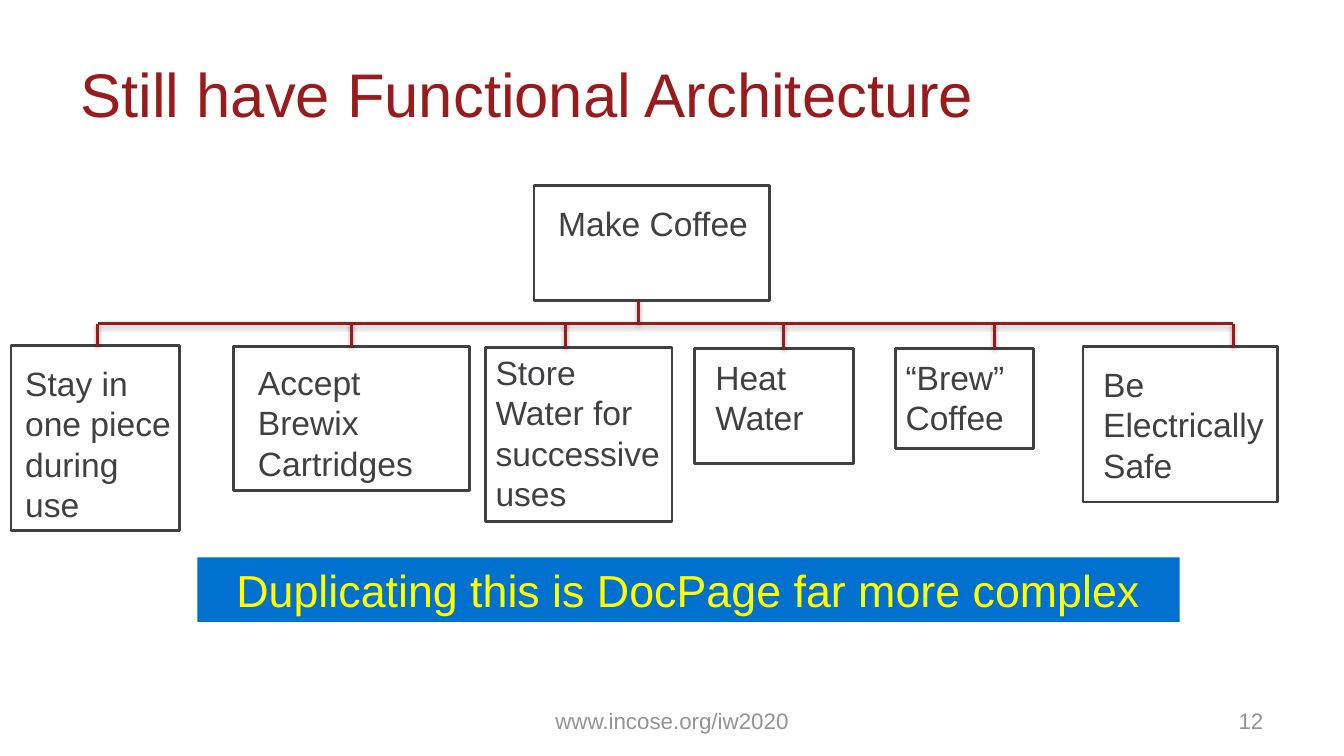
from dataclasses import dataclass

from lxml import etree
from pptx import Presentation
from pptx.dml.color import RGBColor
from pptx.enum.shapes import MSO_CONNECTOR, MSO_SHAPE
from pptx.enum.text import MSO_ANCHOR, PP_ALIGN
from pptx.oxml.ns import qn
from pptx.util import Pt

RECT, STRAIGHT = MSO_SHAPE.RECTANGLE, MSO_CONNECTOR.STRAIGHT
LEFT, CENTER, RIGHT = PP_ALIGN.LEFT, PP_ALIGN.CENTER, PP_ALIGN.RIGHT
TOP, MIDDLE = MSO_ANCHOR.TOP, MSO_ANCHOR.MIDDLE

# Content: boxes are (left, top, width, height) in px, 100 px to the inch
SLIDE = (1334, 750)
TITLE = ("Still have Functional Architecture", (67, 30, 1201, 125))
BANNER = ("Duplicating this is DocPage far more complex", (196, 553, 975, 64))
FOOTERS = [
    ("www.incose.org/iw2020", (456, 695, 422, 40), CENTER),
    ("12", (956, 695, 311, 40), RIGHT),
]
# text, box, (left, top) text inset, x of the stem
ROOT = ("Make Coffee", (530, 184, 234, 114), (24, 17), 634)
FUNCTIONS = [
    ("Stay in one piece during use", (11, 343, 167, 183), (14, 17), 97),
    ("Accept Brewix Cartridges", (232, 344, 234, 143), (24, 15), 349),
    ("Store Water for successive uses", (482, 345, 185, 172), (10, 4), 561),
    ("Heat Water", (689, 346, 158, 114), (21, 8), 778),
    ("“Brew” Coffee", (889, 346, 137, 99), (10, 8), 987),
    ("Be Electrically Safe", (1075, 344, 193, 154), (20, 17), 1224),
]
BUS_Y = 321


@dataclass(frozen=True)
class Theme:
    font: str = "Arial"
    red: str = "981B1E"
    ink: str = "414042"
    grey: str = "939393"
    blue: str = "0071CE"
    yellow: str = "FFFF00"
    title: int = 44
    banner: int = 32
    body: int = 24
    footer: int = 16
    line: int = 2


THEME = Theme()
PX = 9144


def emu(values):
    return [v * PX for v in values]


def rgb(colour):
    return RGBColor.from_string(colour)


def write(sp, text, size, colour, align=LEFT, anchor=TOP, insets=(10, 5, 10, 5), leading=None):
    tf = sp.text_frame
    tf.text = text
    tf.word_wrap = True
    tf.vertical_anchor = anchor
    tf.margin_left, tf.margin_top, tf.margin_right, tf.margin_bottom = emu(insets)
    p = tf.paragraphs[0]
    p.alignment = align
    if leading:
        p.line_spacing = Pt(leading)
    font = p.runs[0].font
    font.name, font.size = THEME.font, Pt(size)
    font.color.rgb = rgb(colour)


def add_rect(s, box):
    sp = s.shapes.add_shape(RECT, *emu(box))
    sp.shadow.inherit = False
    return sp


def add_function(s, text, box, inset):
    sp = add_rect(s, box)
    sp.fill.background()
    sp.line.color.rgb = rgb(THEME.ink)
    sp.line.width = Pt(THEME.line)
    write(sp, text, THEME.body, THEME.ink, insets=(*inset, 4, 0), leading=28.8)
    return sp


def add_line(s, x1, y1, x2, y2):
    """Add a red tree line with a soft shadow below it."""
    cx = s.shapes.add_connector(STRAIGHT, *emu((x1, y1, x2, y2)))
    cx.line.color.rgb = rgb(THEME.red)
    cx.line.width = Pt(THEME.line)
    effects = etree.SubElement(cx._element.spPr, qn("a:effectLst"))
    shadow = etree.SubElement(effects, qn("a:outerShdw"), blurRad="40000",
                              dist="20000", dir="5400000", rotWithShape="0")
    black = etree.SubElement(shadow, qn("a:srgbClr"), val="000000")
    etree.SubElement(black, qn("a:alpha"), val="38000")
    return cx


def add_tree(s):
    text, box, inset, root_x = ROOT
    add_function(s, text, box, inset)
    stems = [stem for *_, stem in FUNCTIONS]
    add_line(s, stems[0], BUS_Y, stems[-1], BUS_Y)
    add_line(s, root_x, box[1] + box[3], root_x, BUS_Y)
    for text, box, inset, stem in FUNCTIONS:
        sp = add_function(s, text, box, inset)
        cx = add_line(s, stem, BUS_Y, stem, box[1])
        if stem == box[0] + box[2] / 2:
            cx.end_connect(sp, 0)


def main():
    prs = Presentation()
    prs.slide_width, prs.slide_height = emu(SLIDE)
    s = prs.slides.add_slide(prs.slide_layouts[5])

    text, box = TITLE
    title = s.shapes.title
    title.left, title.top, title.width, title.height = emu(box)
    wide = (13, 7, 13, 7)
    write(title, text, THEME.title, THEME.red, anchor=MIDDLE, insets=wide)

    for text, box, align in FOOTERS:
        sp = s.shapes.add_textbox(*emu(box))
        write(sp, text, THEME.footer, THEME.grey, align, MIDDLE, wide)

    add_tree(s)

    text, box = BANNER
    banner = add_rect(s, box)
    banner.fill.solid()
    banner.fill.fore_color.rgb = rgb(THEME.blue)
    banner.line.fill.background()
    write(banner, text, THEME.banner, THEME.yellow, CENTER, leading=38.4)

    prs.save("out.pptx")


if __name__ == "__main__":
    main()
